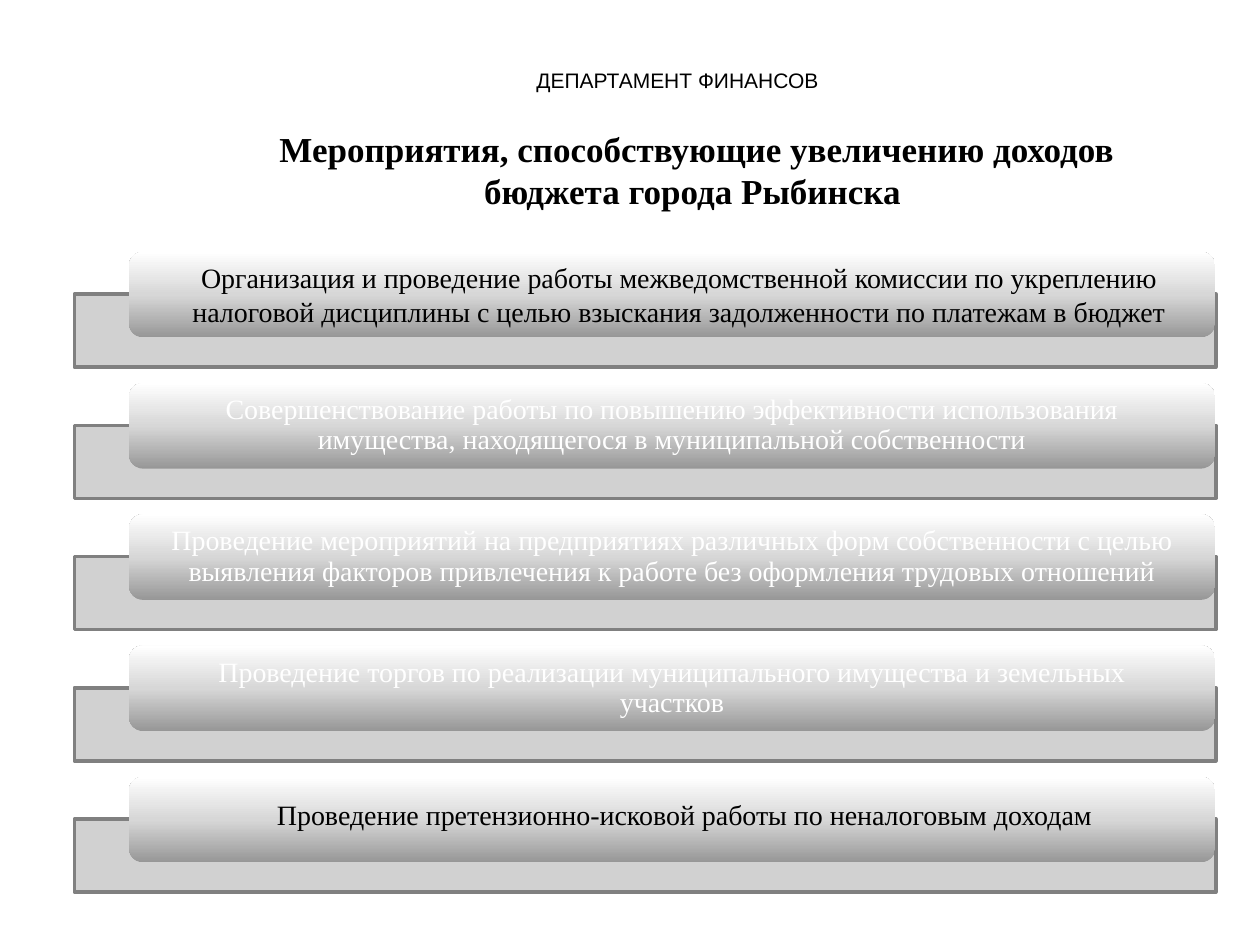
import copy

import pptx
import pptx.dml.color
import pptx.enum.shapes
import pptx.enum.text
import pptx.oxml.ns
import pptx.util
from lxml import etree

Pt = pptx.util.Pt
ALIGN = pptx.enum.text.PP_ALIGN
ANCHOR = pptx.enum.text.MSO_ANCHOR
FIT = pptx.enum.text.MSO_AUTO_SIZE.SHAPE_TO_FIT_TEXT
SHAPE = pptx.enum.shapes.MSO_SHAPE
qn = pptx.oxml.ns.qn
color = pptx.dml.color.RGBColor.from_string


def write(shape, text, size, font="Times New Roman", hex_color="000000",
          bold=False, align=ALIGN.CENTER):
    paragraph = shape.text_frame.paragraphs[0]
    paragraph.alignment = align
    run = paragraph.add_run()
    run.text = text
    run.font.name = font
    run.font.size = Pt(size)
    run.font.bold = bold
    run.font.color.rgb = color(hex_color)
    return paragraph


def add_text_box(left, top, width, height, wrap=True):
    """Add an empty box that grows with its text."""
    box = slide.shapes.add_textbox(Pt(left), Pt(top), Pt(width), Pt(height))
    box.text_frame.word_wrap = wrap
    box.text_frame.auto_size = FIT
    return box


presentation = pptx.Presentation()
presentation.slide_width = Pt(720)
presentation.slide_height = Pt(540)
slide = presentation.slides.add_slide(presentation.slide_layouts[5])

title = slide.shapes.title
title.left, title.top, title.width, title.height = Pt(117.4), Pt(69.1), Pt(561.6), Pt(55.4)
title.text_frame.vertical_anchor = ANCHOR.TOP
title.text_frame.auto_size = FIT
write(title, "Мероприятия, способствующие увеличению доходов бюджета города Рыбинска ",
      20, bold=True)

department = add_text_box(65.5, 35.3, 646.6, 21.6)
write(department, "ДЕПАРТАМЕНТ ФИНАНСОВ ", 12, font="Arial")

# Five measures; the first and last bars carry their text in separate boxes
bar_texts = [
    None,
    "Совершенствование работы по повышению эффективности использования имущества, "
    "находящегося в муниципальной собственности",
    "Проведение мероприятий на предприятиях различных форм собственности с целью "
    "выявления факторов привлечения к работе без оформления трудовых отношений",
    "Проведение торгов по реализации муниципального имущества и земельных участков",
    None,
]
gradient_stops = [(0, "979797"), (0.5, "D7D7D7"), (1, "FFFFFF")]
first_top, pitch = 143.8, 75

for index, text in enumerate(bar_texts):
    top = first_top + index * pitch

    panel = slide.shapes.add_shape(SHAPE.RECTANGLE, Pt(42.5), Pt(top + 24.2), Pt(652.3), Pt(41.8))
    panel.shadow.inherit = False
    panel.fill.solid()
    panel.fill.fore_color.rgb = color("CCCCCC")
    fill_color = panel._element.spPr.find(qn("a:solidFill"))[0]
    etree.SubElement(fill_color, qn("a:alpha"), val="90000")
    panel.line.color.rgb = color("808080")
    panel.line.width = Pt(2)

    bar = slide.shapes.add_shape(SHAPE.ROUNDED_RECTANGLE, Pt(73.7), Pt(top), Pt(620.6), Pt(49))
    bar.shadow.inherit = False
    bar.line.fill.background()
    bar.fill.gradient()
    bar.fill.gradient_angle = 90
    stop_list = bar._element.spPr.find(qn("a:gradFill")).find(qn("a:gsLst"))
    stop_list.append(copy.deepcopy(stop_list[0]))
    for stop, (position, hex_color) in zip(bar.fill.gradient_stops, gradient_stops):
        stop.position = position
        stop.color.rgb = color(hex_color)

    if text:
        frame = bar.text_frame
        frame.word_wrap = True
        frame.vertical_anchor = ANCHOR.MIDDLE
        frame.margin_left = frame.margin_right = Pt(17.1)
        frame.margin_top = frame.margin_bottom = 0
        write(bar, text, 16, hex_color="FFFFFF").line_spacing = 0.9

commission = add_text_box(82.1, 145.4, 612, 46.1)
write(commission, "Организация и проведение работы межведомственной комиссии по укреплению "
      "налоговой дисциплины с целью взыскания задолженности по платежам в бюджет", 16)

claims = add_text_box(151.2, 452.2, 486.7, 26.6, wrap=False)
write(claims, "Проведение претензионно-исковой работы по неналоговым доходам", 16,
      align=ALIGN.LEFT)

presentation.save("out.pptx")
